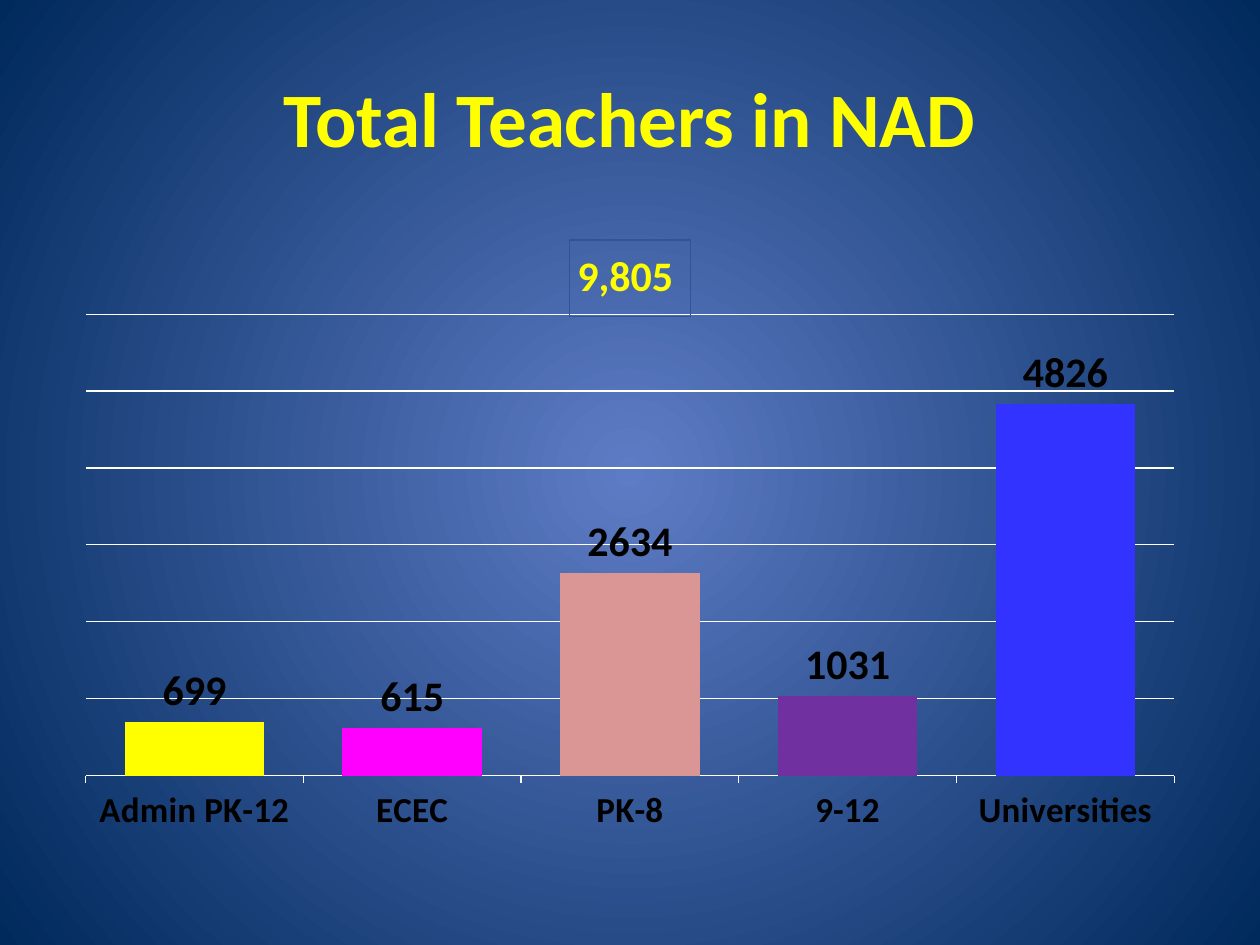
from lxml import etree
from pptx import Presentation, util as u
from pptx.chart.data import CategoryChartData
from pptx.dml.color import RGBColor
from pptx.enum import chart as ch, text as tx
from pptx.oxml import parse_xml
from pptx.oxml.ns import nsdecls, qn

HEAD = "Total Teachers in NAD"
TOTAL = "9,805 "
BARS = [
    ("Admin PK-12", 699, "FFFF00"),
    ("ECEC", 615, "FF00FF"),
    ("PK-8", 2634, "D99694"),
    ("9-12", 1031, "7030A0"),
    ("Universities", 4826, "3333FF"),
]
GLOW = ["5E7CC5", "00295C"]
PLOT = {"x": 0.02, "y": 0.15, "w": 0.96, "h": 0.74}
SCALE = {"minimum_scale": 0, "maximum_scale": 6000, "major_unit": 1000,
         "has_major_gridlines": True, "visible": False}
TICKS = {"major_tick_mark": ch.XL_TICK_MARK.OUTSIDE,
         "minor_tick_mark": ch.XL_TICK_MARK.NONE,
         "has_major_gridlines": False}
LABELS = {"show_value": True, "position": ch.XL_LABEL_POSITION.OUTSIDE_END}


def put(obj, vals):
    for key, val in vals.items():
        setattr(obj, key, val)


def paint(color, code):
    color.rgb = RGBColor.from_string(code)


def style(font, size, code, bold=True):
    put(font, {"name": "Calibri", "size": u.Pt(size), "bold": bold})
    paint(font.color, code)


def rule(line, code):
    line.width = u.Pt(0.75)
    paint(line.color, code)


def place(shape, left, top, width, height):
    put(shape, {"left": u.Cm(left), "top": u.Cm(top),
                "width": u.Cm(width), "height": u.Cm(height)})


def back(slide):
    fill = slide.background.fill
    fill.gradient()
    for stop, code, pos in zip(fill.gradient_stops, GLOW, (0, 1)):
        paint(stop.color, code)
        stop.position = pos
    grad = slide.element.find(".//" + qn("a:gradFill"))
    grad.replace(grad.find(qn("a:lin")), parse_xml(
        f'<a:path {nsdecls("a")} path="circle">'
        '<a:fillToRect l="50000" t="50000" r="50000" b="50000"/></a:path>'))


def frame(chart):
    area = chart.element.find(".//" + qn("c:plotArea"))
    for old in area.findall(qn("c:layout")):
        area.remove(old)
    box = parse_xml(f'<c:layout {nsdecls("c")}><c:manualLayout/></c:layout>')
    vals = {"layoutTarget": "inner", "xMode": "edge", "yMode": "edge", **PLOT}
    for key, val in vals.items():
        etree.SubElement(box[0], qn("c:" + key)).set("val", str(val))
    area.insert(0, box)


def graph(slide):
    names, nums, hues = zip(*BARS)
    data = CategoryChartData()
    data.categories = names
    data.add_series("Series 1", nums)
    spot = [u.Cm(n) for n in (1.27, 4.45, 22.86, 12.57)]
    chart = slide.shapes.add_chart(
        ch.XL_CHART_TYPE.COLUMN_CLUSTERED, *spot, data).chart
    chart.has_legend = False
    style(chart.font, 18, "FFFFFF", False)

    title = chart.chart_title
    title.text_frame.text = TOTAL
    style(title.text_frame.paragraphs[0].runs[0].font, 24, "FFFF00")
    rule(title.format.line, "2F5597")

    put(chart.value_axis, SCALE)
    put(chart.category_axis, TICKS)
    style(chart.category_axis.tick_labels.font, 20, "000000")
    for line in (chart.value_axis.major_gridlines.format.line,
                 chart.category_axis.format.line):
        rule(line, "FFFFFF")

    plot = chart.plots[0]
    put(plot, {"gap_width": 56, "vary_by_categories": False,
               "has_data_labels": True})
    put(plot.data_labels, LABELS)
    style(plot.data_labels.font, 24, "000000")
    for i, hue in enumerate(hues):
        fill = plot.series[0].points[i].format.fill
        fill.solid()
        paint(fill.fore_color, hue)
    frame(chart)


def main():
    deck = Presentation()
    put(deck, {"slide_width": u.Cm(25.4), "slide_height": u.Cm(19.05)})
    slide = deck.slides.add_slide(deck.slide_layouts[5])
    back(slide)
    head = slide.shapes.title
    place(head, 1.27, 0.76, 22.86, 3.18)
    head.text_frame.text = HEAD
    head.text_frame.vertical_anchor = tx.MSO_ANCHOR.MIDDLE
    para = head.text_frame.paragraphs[0]
    para.alignment = tx.PP_ALIGN.CENTER
    style(para.runs[0].font, 44, "FFFF00")
    graph(slide)
    deck.save("out.pptx")


if __name__ == "__main__":
    main()
